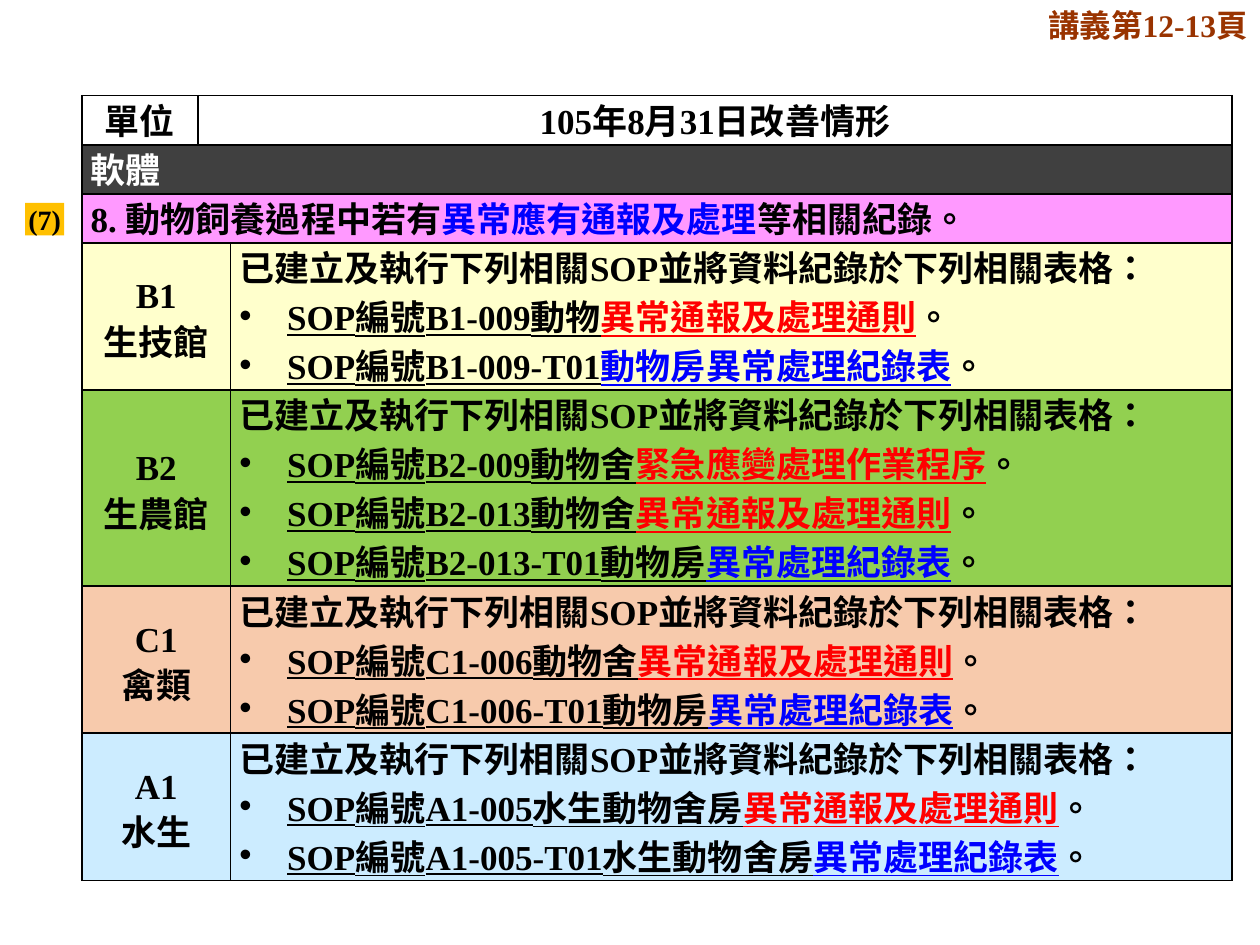
from lxml import etree
from pptx import Presentation
from pptx.dml.color import RGBColor
from pptx.enum import shapes, text
from pptx.oxml import parse_xml
from pptx.oxml.ns import nsdecls, qn
from pptx.util import Inches, Pt

BLACK = RGBColor(0x00, 0x00, 0x00)
WHITE = RGBColor(0xFF, 0xFF, 0xFF)
RED = RGBColor(0xFF, 0x00, 0x00)
BLUE = RGBColor(0x00, 0x00, 0xFF)
BROWN = RGBColor(0x99, 0x33, 0x00)
AMBER = RGBColor(0xFF, 0xC0, 0x00)
CHARCOAL = RGBColor(0x40, 0x40, 0x40)
PINK = RGBColor(0xFF, 0x99, 0xFF)
CREAM = RGBColor(0xFF, 0xFF, 0xCC)
GREEN = RGBColor(0x92, 0xD0, 0x50)
PEACH = RGBColor(0xF7, 0xCA, 0xAC)
SKY = RGBColor(0xCC, 0xEC, 0xFF)

LEFT, CENTER, RIGHT = text.PP_ALIGN.LEFT, text.PP_ALIGN.CENTER, text.PP_ALIGN.RIGHT
LINE = 28  # points from one table line to the next


def write(frame, paragraphs, size=20, align=LEFT, spacing=LINE):
    """Fill frame; a paragraph is a list of (words, colour, underlined), bulleted if it has underlining."""
    for i, runs in enumerate(paragraphs):
        paragraph = frame.paragraphs[0] if i == 0 else frame.add_paragraph()
        paragraph.alignment = align
        if spacing:
            paragraph.line_spacing = Pt(spacing)
        if any(underlined for _, _, underlined in runs):
            properties = paragraph._p.get_or_add_pPr()
            properties.set("marL", str(Inches(0.38)))
            properties.set("indent", str(Inches(-0.38)))
            etree.SubElement(properties, qn("a:buFont")).set("typeface", "Arial")
            etree.SubElement(properties, qn("a:buChar")).set("char", "•")
        for words, colour, underlined in runs:
            run = paragraph.add_run()
            run.text = words
            run.font.name = "Times New Roman"
            run.font.size = Pt(size)
            run.font.bold = True
            run.font.underline = underlined
            run.font.color.rgb = colour
            # Traditional Chinese centres its punctuation marks
            run._r.get_or_add_rPr().set("lang", "zh-TW")


def format_cell(cell, fill):
    cell.margin_left = cell.margin_right = Inches(0.07)
    cell.margin_top = cell.margin_bottom = 0
    if fill is None:
        cell.fill.background()
    else:
        cell.fill.solid()
        cell.fill.fore_color.rgb = fill
    for i, side in enumerate("LRTB"):
        cell._tc.get_or_add_tcPr().insert(i, parse_xml(
            f'<a:ln{side} {nsdecls("a")} w="12700"><a:solidFill>'
            f'<a:srgbClr val="{BLACK}"/></a:solidFill></a:ln{side}>'))


INTRO = "已建立及執行下列相關SOP並將資料紀錄於下列相關表格："
RULES, RECORD = "異常通報及處理通則", "異常處理紀錄表"
units = [
    ("B1", "生技館", CREAM, [
        ("SOP編號B1-009動物", RULES, RED),
        ("SOP編號B1-009-T01", "動物房" + RECORD, BLUE)]),
    ("B2", "生農館", GREEN, [
        ("SOP編號B2-009動物舍", "緊急應變處理作業程序", RED),
        ("SOP編號B2-013動物舍", RULES, RED),
        ("SOP編號B2-013-T01動物房", RECORD, BLUE)]),
    ("C1", "禽類", PEACH, [
        ("SOP編號C1-006動物舍", RULES, RED),
        ("SOP編號C1-006-T01動物房", RECORD, BLUE)]),
    ("A1", "水生", SKY, [
        ("SOP編號A1-005水生動物舍房", RULES, RED),
        ("SOP編號A1-005-T01水生動物舍房", RECORD, BLUE)]),
]

prs = Presentation()
prs.slide_width, prs.slide_height = Inches(10), Inches(7.5)
slide = prs.slides.add_slide(prs.slide_layouts[6])

# Table: each row is as high as its lines of text
line_counts = [1, 1, 1] + [1 + len(sops) for *_, sops in units]
row_fills = [None, CHARCOAL, PINK] + [fill for _, _, fill, _ in units]
table = slide.shapes.add_table(
    len(line_counts), 3, Inches(0.65), Inches(0.76),
    Inches(9.13), Pt(LINE * sum(line_counts))).table
table.first_row = table.horz_banding = False
for column, width in zip(table.columns, (0.92, 0.26, 7.95)):
    column.width = Inches(width)
for row, lines, fill in zip(table.rows, line_counts, row_fills):
    row.height = Pt(LINE * lines)
    for cell in row.cells:
        format_cell(cell, fill)

table.cell(0, 1).merge(table.cell(0, 2))
for column, heading in enumerate(("單位", "105年8月31日改善情形")):
    cell = table.cell(0, column)
    cell.vertical_anchor = text.MSO_ANCHOR.MIDDLE
    write(cell.text_frame, [[(heading, BLACK, False)]], align=CENTER)

section = [("軟體", WHITE, False)]
item = [("8. 動物飼養過程中若有", BLACK, False),
        ("異常應有通報及處理", BLUE, False),
        ("等相關紀錄。", BLACK, False)]
for row, runs in enumerate((section, item), start=1):
    table.cell(row, 0).merge(table.cell(row, 2))
    write(table.cell(row, 0).text_frame, [runs])

for row, (code, place, _, sops) in enumerate(units, start=3):
    unit = table.cell(row, 0)
    unit.merge(table.cell(row, 1))
    unit.vertical_anchor = text.MSO_ANCHOR.MIDDLE
    write(unit.text_frame, [[(code, BLACK, False)], [(place, BLACK, False)]], align=CENTER)
    bullets = [[(number, BLACK, True), (document, colour, True), ("。", BLACK, False)]
               for number, document, colour in sops]
    write(table.cell(row, 2).text_frame, [[(INTRO, BLACK, False)]] + bullets)

# Handout page reference
handout = slide.shapes.add_textbox(Inches(7.67), 0, Inches(2.33), Inches(0.4)).text_frame
handout.word_wrap = True
handout.vertical_anchor = text.MSO_ANCHOR.MIDDLE
write(handout, [[("講義第12-13頁", BROWN, False)]], size=18, align=RIGHT, spacing=None)

# Item number beside the table, on one line inside its box
marker = slide.shapes.add_shape(
    shapes.MSO_SHAPE.RECTANGLE, Inches(0.2), Inches(1.61), Inches(0.31), Inches(0.26))
marker.shadow.inherit = False
marker.fill.solid()
marker.fill.fore_color.rgb = AMBER
marker.line.fill.background()
number = marker.text_frame
number.margin_left = number.margin_right = number.margin_top = number.margin_bottom = 0
number.word_wrap = False
number.vertical_anchor = text.MSO_ANCHOR.MIDDLE
write(number, [[("(7)", BLACK, False)]], size=16, align=CENTER, spacing=None)

prs.save("out.pptx")
